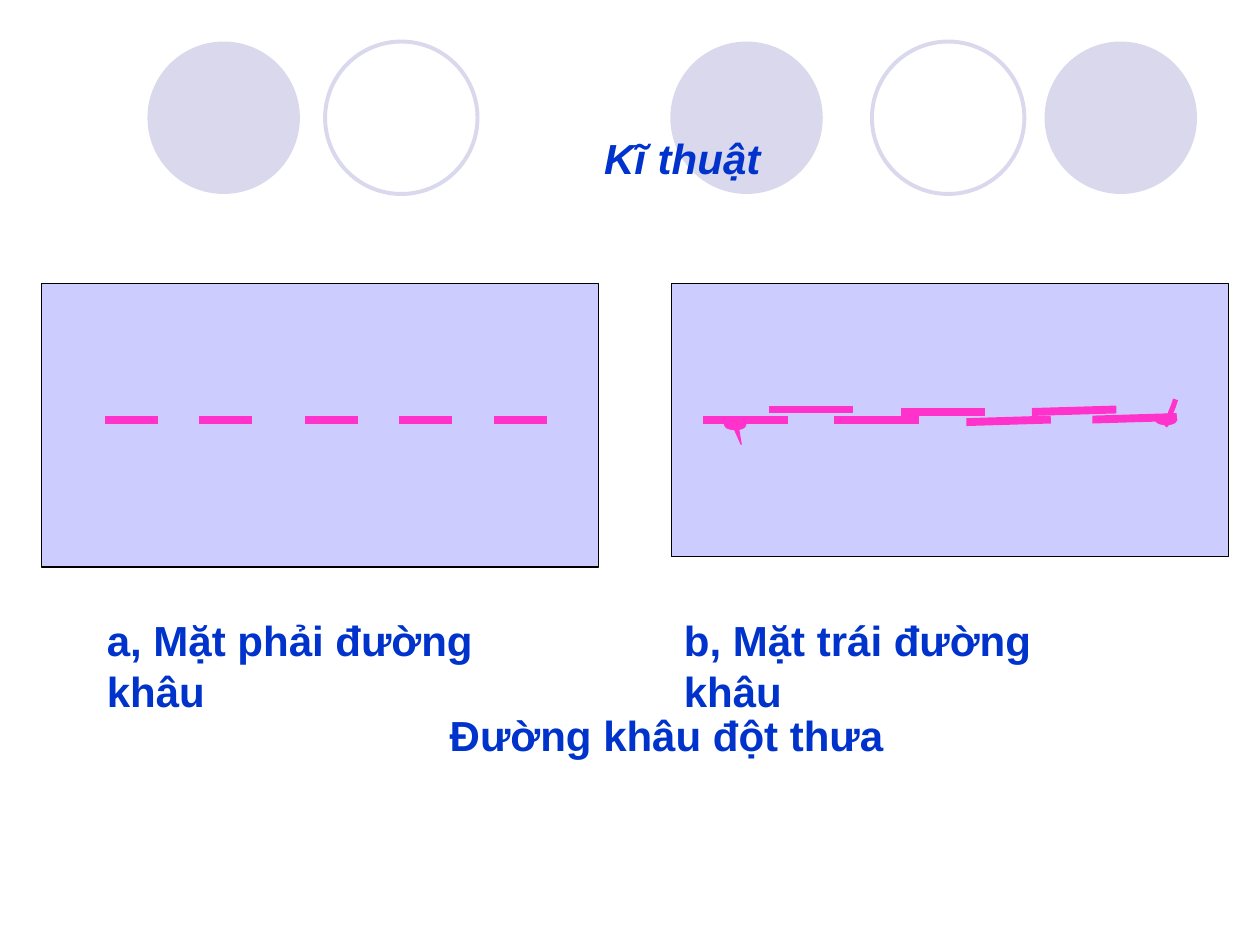
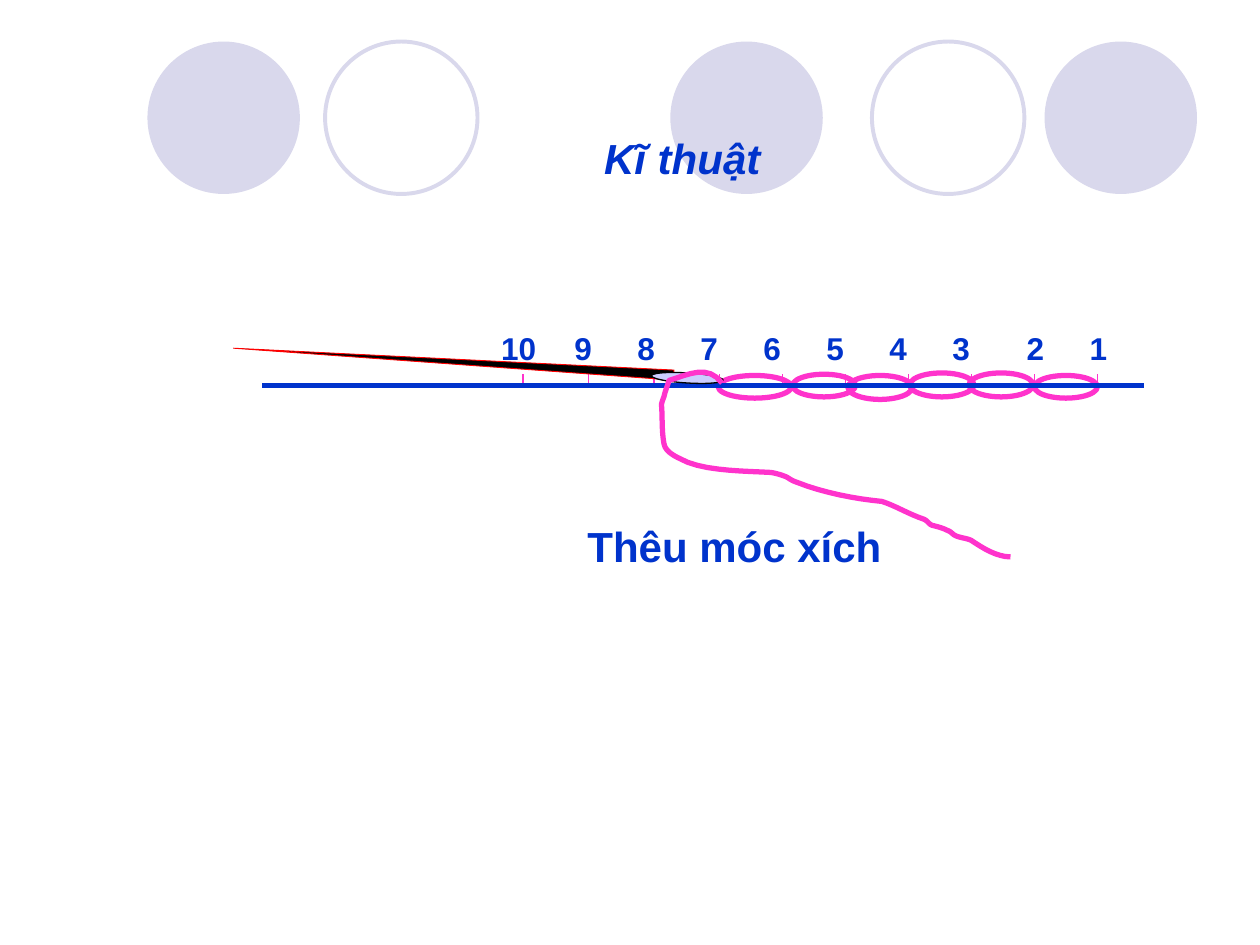
from lxml.etree import SubElement
from pptx import Presentation
from pptx.dml.color import RGBColor
from pptx.enum.shapes import MSO_CONNECTOR, MSO_SHAPE as SHAPE
from pptx.enum.text import MSO_ANCHOR as ANCHOR, PP_ALIGN as ALIGN
from pptx.oxml.ns import qn
from pptx.util import Inches, Pt

BLUE = RGBColor(0x00, 0x33, 0xCC)
PINK = RGBColor(0xFF, 0x33, 0xCC)
LILAC = RGBColor(0xD9, 0xD8, 0xEC)
CLOTH = RGBColor(0xCC, 0xCC, 0xFF)
BLACK = RGBColor(0, 0, 0)
RED = RGBColor(0xFF, 0, 0)
WHITE = RGBColor(0xFF, 0xFF, 0xFF)

SUBJECT = "Kĩ thuật"
SUBJECT_BOX = (1.25, 0.42, 8.33, 1.08)
CIRCLE_TOP, CIRCLE_SIZE = 0.33, 1.21
CIRCLES = [(5.32, True), (8.29, True), (1.17, True), (6.92, False), (2.58, False)]  # left, filled

# Running stitch: cloth boxes, stitches and captions
CLOTHS = [(0.33, 2.25, 4.42, 2.25), (5.33, 2.25, 4.42, 2.17)]
SEAM_Y = 3.33
FRONT_LENGTH, BACK_LENGTH = 0.42, 0.67
FRONT_STITCHES = [0.83, 1.58, 2.42, 3.17, 3.92]
BACK_STITCHES = [  # left, start height, end height
    (5.58, 3.33, 3.33), (6.1, 3.25, 3.25), (6.62, 3.33, 3.33), (7.15, 3.27, 3.27),
    (7.67, 3.35, 3.33), (8.19, 3.27, 3.25), (8.67, 3.33, 3.31),
]
KNOTS = [((5.75, 3.33, 0.17, 0.08), (0.281, 1.958)),
         ((9.17, 3.29, 0.17, 0.08), (0.031, 0.708))]
KNOT_TAIL = [(9.33, 3.17), (9.29, 3.3), (9.29, 3.25), (9.29, 3.31)]
STITCH_CAPTIONS = [
    ("a, Mặt phải đường khâu", (0.75, 4.83, 3.67, 0.91), ALIGN.LEFT),
    ("b, Mặt trái đường khâu", (5.33, 4.83, 3.67, 0.91), ALIGN.LEFT),
    ("Đường khâu đột thưa", (2.5, 5.58, 5.58, 0.5), ALIGN.CENTER),
]

# Chain stitch: numbered marks, loops, needle and thread
CHAIN_CAPTION = ("Thêu móc xích", (2.83, 4.08, 6, 0.5), ALIGN.CENTER)
LABEL_TOP, LABEL_HEIGHT = 2.56, 0.41
LABELS = [("10", 3.88, 0.5)] + [(str(n), 4.46 + 0.5 * (9 - n), 0.33) for n in range(9, 2, -1)]
LABELS += [("2", 8.05, 0.33), ("1", 8.55, 0.25)]
MARKS = [8.71 - 0.5 * i for i in range(7)] + [5.71 - 0.52 * i for i in range(1, 4)]
MARK_TOP, BASELINE_Y = 2.89, 3.06
LOOPS = [
    (7.69, 2.96, 0.51, 0.19), (8.21, 2.98, 0.5, 0.18), (7.22, 2.96, 0.51, 0.19),
    (6.73, 2.98, 0.51, 0.19), (6.29, 2.97, 0.5, 0.18), (5.7, 2.98, 0.58, 0.18),
]
NEEDLE, NEEDLE_TURN = (3.56, 1.12, 0.08, 3.5), 273.5
EYE, EYE_TURN = (5.17, 2.96, 0.57, 0.08), 3.5
THREAD = [  # start, then two handles and an end for every curve
    (5.73, 3.04),
    (5.62, 2.89), (5.47, 2.97), (5.31, 3.02), (5.3, 3.06), (5.28, 3.1), (5.27, 3.15),
    (5.26, 3.17), (5.25, 3.21), (5.25, 3.21), (5.26, 3.31), (5.25, 3.42), (5.27, 3.52),
    (5.28, 3.6), (5.4, 3.64), (5.46, 3.67), (5.64, 3.74), (5.94, 3.74), (6.12, 3.75),
    (6.17, 3.76), (6.21, 3.77), (6.25, 3.79), (6.28, 3.81), (6.3, 3.82), (6.33, 3.83),
    (6.53, 3.91), (6.79, 3.96), (7, 3.98), (7.12, 4.02), (7.21, 4.08), (7.33, 4.12),
    (7.36, 4.13), (7.37, 4.16), (7.4, 4.17), (7.44, 4.18), (7.48, 4.19), (7.52, 4.21),
    (7.55, 4.22), (7.56, 4.24), (7.58, 4.25), (7.62, 4.27), (7.67, 4.27), (7.71, 4.29),
    (7.8, 4.35), (7.91, 4.42), (8.02, 4.42),
]


def inches(values):
    return [Inches(value) for value in values]


def paint(shape, fill=None, line=None, width=0.75):
    shape.shadow.inherit = False
    for part, colour in ((shape.fill, fill), (shape.line.fill, line)):
        if colour is None:
            part.background()
        else:
            part.solid()
            part.fore_color.rgb = colour
    if line is not None:
        shape.line.width = Pt(width)
    return shape


def draw(slide, kind, box, **look):
    return paint(slide.shapes.add_shape(kind, *inches(box)), **look)


def stroke(slide, start, end, colour=PINK, width=4.5):
    connector = slide.shapes.add_connector(MSO_CONNECTOR.STRAIGHT, *inches(start + end))
    connector.line.color.rgb = colour
    connector.line.width = Pt(width)
    SubElement(connector.element.spPr, qn("a:effectLst"))


def curve(slide, points, steps=8):
    """Draw joined cubic curves as one open outline."""
    outline = [points[0]]
    for i in range(0, len(points) - 1, 3):
        ends = points[i:i + 4]
        for step in range(1, steps + 1):
            t = step / steps
            weights = ((1 - t) ** 3, 3 * t * (1 - t) ** 2, 3 * t * t * (1 - t), t ** 3)
            outline.append([sum(w * p[axis] for w, p in zip(weights, ends)) for axis in (0, 1)])
    start, *rest = [inches(point) for point in outline]
    builder = slide.shapes.build_freeform(*start)
    builder.add_line_segments(rest, close=False)
    paint(builder.convert_to_shape(), line=PINK, width=3)


def write(shape, text, align=ALIGN.LEFT, anchor=ANCHOR.TOP, size=24, italic=False):
    frame = shape.text_frame
    frame.text = text
    frame.word_wrap = True
    frame.vertical_anchor = anchor
    paragraph = frame.paragraphs[0]
    paragraph.alignment = align
    style = {"name": "Arial", "size": Pt(size), "bold": True, "italic": italic}
    for key, value in style.items():
        setattr(paragraph.font, key, value)
    paragraph.font.color.rgb = BLUE


def caption(slide, text, box, align):
    write(slide.shapes.add_textbox(*inches(box)), text, align)


def add_slide(deck, layout):
    slide = deck.slides.add_slide(layout)
    title = slide.shapes.title
    title.left, title.top, title.width, title.height = inches(SUBJECT_BOX)
    write(title, SUBJECT, ALIGN.CENTER, ANCHOR.BOTTOM, italic=True)
    return slide


def move_circles_to_layout(slide, layout):
    """Draw the shared circles once and hand them to the layout."""
    for left, filled in CIRCLES:
        look = {"fill": LILAC} if filled else {"line": LILAC, "width": 2.25}
        circle = draw(slide, SHAPE.OVAL, (left, CIRCLE_TOP, CIRCLE_SIZE, CIRCLE_SIZE), **look)
        layout.shapes.element.insert(2, circle.element)


def running_stitch(slide):
    for box in CLOTHS:
        draw(slide, SHAPE.RECTANGLE, box, fill=CLOTH, line=BLACK)
    for x in FRONT_STITCHES:
        stroke(slide, (x, SEAM_Y), (x + FRONT_LENGTH, SEAM_Y))
    for x, start_y, end_y in BACK_STITCHES:
        stroke(slide, (x, start_y), (x + BACK_LENGTH, end_y))
    for box, tip in KNOTS:
        knot = draw(slide, SHAPE.OVAL_CALLOUT, box, fill=PINK, line=PINK)
        for i, value in enumerate(tip):
            knot.adjustments[i] = value
    curve(slide, KNOT_TAIL)
    for item in STITCH_CAPTIONS:
        caption(slide, *item)


def chain_stitch(slide):
    for number, left, width in LABELS:
        label = draw(slide, SHAPE.RECTANGLE, (left, LABEL_TOP, width, LABEL_HEIGHT),
                     fill=WHITE, line=WHITE)
        write(label, number, size=18)
    for x in MARKS:
        stroke(slide, (x, MARK_TOP + 0.08), (x, BASELINE_Y), width=0.75)
    for box in LOOPS:
        draw(slide, SHAPE.OVAL, box, line=PINK, width=3)
    stroke(slide, (2.08, BASELINE_Y), (9.08, BASELINE_Y), BLUE, 3)
    caption(slide, *CHAIN_CAPTION)
    needle = draw(slide, SHAPE.FLOWCHART_EXTRACT, NEEDLE, fill=BLACK, line=RED, width=0.5)
    needle.rotation = NEEDLE_TURN
    eye = draw(slide, SHAPE.OVAL, EYE, fill=CLOTH, line=BLACK)
    eye.rotation = EYE_TURN
    curve(slide, THREAD)


def main():
    deck = Presentation()
    deck.slide_width, deck.slide_height = Inches(10), Inches(7.5)
    layout = deck.slide_layouts[5]
    stitch_slide, chain_slide = (add_slide(deck, layout) for _ in range(2))
    move_circles_to_layout(stitch_slide, layout)
    running_stitch(stitch_slide)
    chain_stitch(chain_slide)
    deck.save("out.pptx")


if __name__ == "__main__":
    main()
